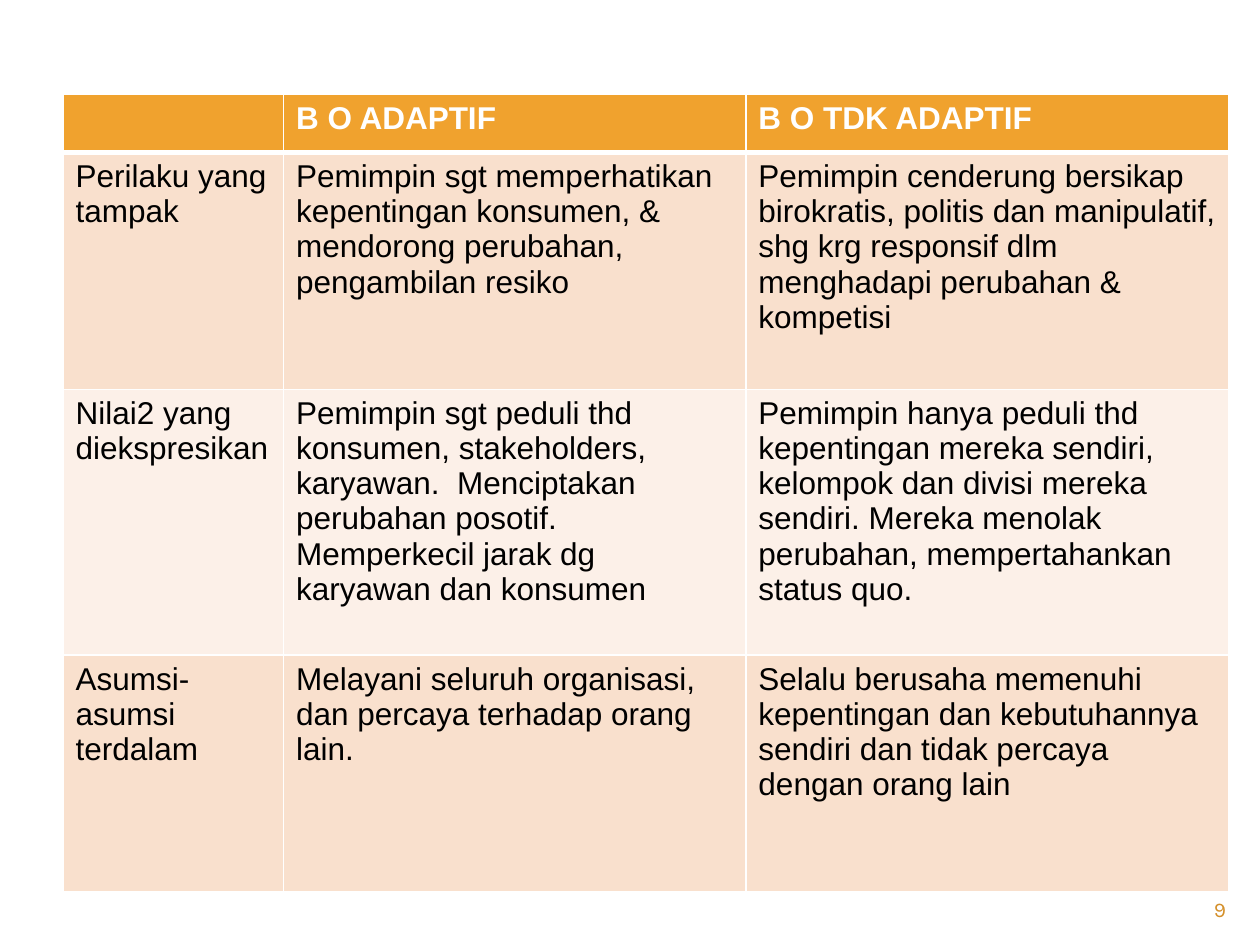
"""Build a slide with a table comparing adaptive and non-adaptive organisational culture."""
from lxml.etree import SubElement
from pptx import Presentation
from pptx.dml.color import RGBColor
from pptx.enum.text import MSO_ANCHOR, PP_ALIGN
from pptx.oxml.ns import qn
from pptx.util import Inches, Pt

WHITE = RGBColor(0xFF, 0xFF, 0xFF)
BLACK = RGBColor(0x00, 0x00, 0x00)
ORANGE = RGBColor(0xF0, 0xA2, 0x2E)
DARK_ORANGE = RGBColor(0xD4, 0x8F, 0x29)
PEACH = RGBColor(0xF9, 0xE0, 0xCD)
PALE_PEACH = RGBColor(0xFC, 0xF0, 0xE8)

ROWS = [
    ("", "B O ADAPTIF", "B O TDK ADAPTIF"),
    (
        "Perilaku yang tampak",
        "Pemimpin sgt memperhatikan kepentingan konsumen, & mendorong perubahan, "
        "pengambilan resiko",
        "Pemimpin cenderung bersikap birokratis, politis dan manipulatif, "
        "shg krg responsif dlm menghadapi perubahan & kompetisi",
    ),
    (
        "Nilai2 yang diekspresikan",
        "Pemimpin sgt peduli thd konsumen, stakeholders, karyawan.  Menciptakan "
        "perubahan posotif. Memperkecil jarak dg karyawan dan konsumen",
        "Pemimpin hanya peduli thd kepentingan mereka sendiri, kelompok dan divisi "
        "mereka sendiri. Mereka menolak perubahan, mempertahankan status quo.",
    ),
    (
        "Asumsi-asumsi terdalam",
        "Melayani seluruh organisasi, dan percaya terhadap orang lain.",
        "Selalu berusaha memenuhi kepentingan dan kebutuhannya sendiri dan tidak "
        "percaya dengan orang lain",
    ),
]
COLUMN_WIDTHS = (1.75, 3.67, 3.83)
ROW_HEIGHTS = (0.46, 1.88, 2.11, 1.88)
TABLE_LEFT, TABLE_TOP = 0.5, 0.75
PAGE_NUMBER = "9"


def add_run(paragraph, text, font_name, size, color, bold=False):
    run = paragraph.add_run()
    run.text = text
    run.font.name = font_name
    run.font.size = Pt(size)
    run.font.bold = bold
    run.font.color.rgb = color


def set_borders(cell, widths):
    properties = cell._tc.get_or_add_tcPr()
    for side, width in zip("LRTB", widths):
        line = SubElement(properties, qn(f"a:ln{side}"), w=str(Pt(width)))
        fill = SubElement(line, qn("a:solidFill"))
        SubElement(fill, qn("a:srgbClr"), val=str(WHITE))


def add_culture_table(slide):
    table = slide.shapes.add_table(
        len(ROWS), len(COLUMN_WIDTHS), Inches(TABLE_LEFT), Inches(TABLE_TOP),
        Inches(sum(COLUMN_WIDTHS)), Inches(sum(ROW_HEIGHTS))).table
    for column, width in zip(table.columns, COLUMN_WIDTHS):
        column.width = Inches(width)
    for row_index, (texts, height) in enumerate(zip(ROWS, ROW_HEIGHTS)):
        table.rows[row_index].height = Inches(height)
        is_header = row_index == 0
        band = PEACH if row_index % 2 else PALE_PEACH
        top_width = 3 if row_index == 1 else 1
        bottom_width = 3 if is_header else 1
        for column_index, text in enumerate(texts):
            cell = table.cell(row_index, column_index)
            set_borders(cell, (1, 1, top_width, bottom_width))
            cell.fill.solid()
            cell.fill.fore_color.rgb = ORANGE if is_header else band
            if text:
                add_run(cell.text_frame.paragraphs[0], text, "Arial", 18,
                        WHITE if is_header else BLACK, is_header)


def add_page_number(slide):
    box = slide.shapes.add_textbox(Inches(9), Inches(7.08), Inches(0.83), Inches(0.27))
    frame = box.text_frame
    frame.word_wrap = True
    frame.vertical_anchor = MSO_ANCHOR.MIDDLE
    paragraph = frame.paragraphs[0]
    paragraph.alignment = PP_ALIGN.RIGHT
    add_run(paragraph, PAGE_NUMBER, "Karla", 12, DARK_ORANGE)


def main():
    presentation = Presentation()
    presentation.slide_width = Inches(10)
    presentation.slide_height = Inches(7.5)
    slide = presentation.slides.add_slide(presentation.slide_layouts[6])
    add_page_number(slide)
    add_culture_table(slide)
    presentation.save("out.pptx")


if __name__ == "__main__":
    main()
